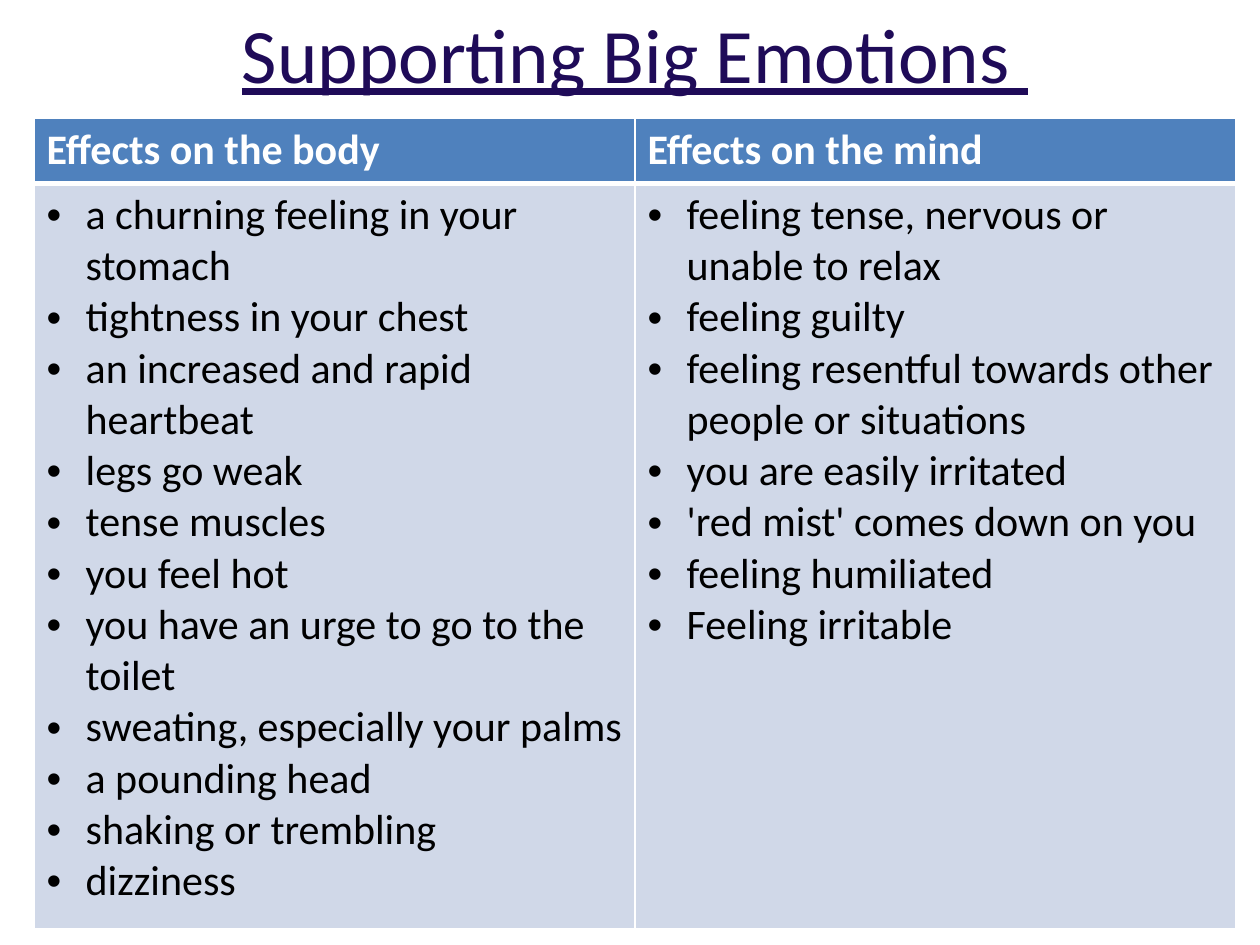
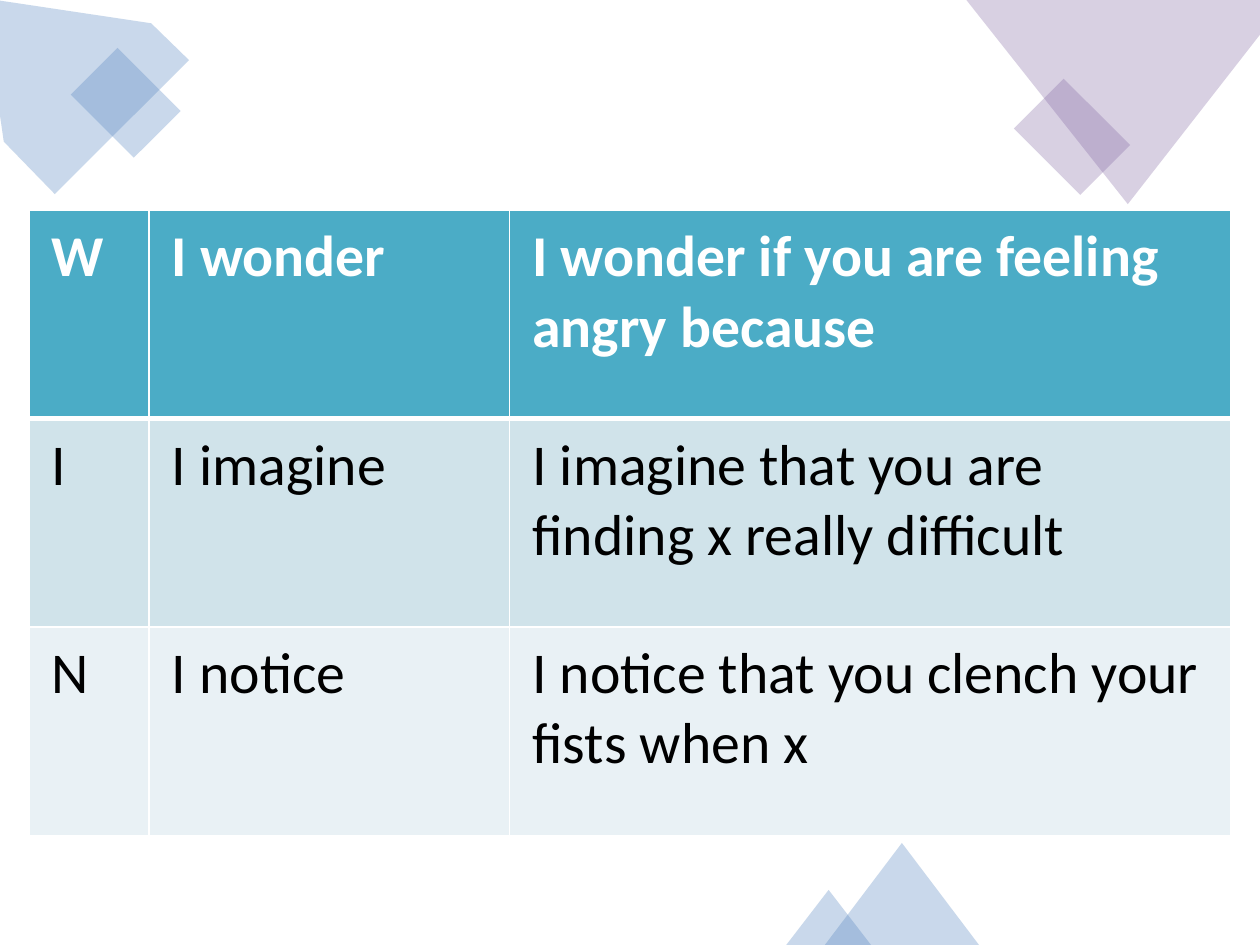
import dataclasses

import lxml.etree
import pptx
import pptx.dml.color
import pptx.enum.shapes
import pptx.enum.text
import pptx.oxml
import pptx.oxml.ns
import pptx.util

RGB = pptx.dml.color.RGBColor
SHAPE = pptx.enum.shapes.MSO_SHAPE
WHITE = RGB(0xFF, 0xFF, 0xFF)
BLACK = RGB(0x00, 0x00, 0x00)
INDIGO = RGB(0x1F, 0x0B, 0x58)
BLUE = RGB(0x4F, 0x81, 0xBD)
PURPLE = RGB(0x80, 0x64, 0xA2)
TEAL = RGB(0x4B, 0xAC, 0xC6)
PALE_BLUE = RGB(0xD0, 0xD8, 0xE8)
PALE_TEAL = RGB(0xD0, 0xE3, 0xEA)
FAINT_TEAL = RGB(0xE9, 0xF1, 0xF5)
FONT = "Calibri"
GRID_COLUMNS, GRID_ROWS = 100, 75
UNIT = pptx.util.Inches(10) // GRID_COLUMNS
TITLE_ONLY, BLANK = 5, 6

BODY_EFFECTS = [
    "a churning feeling in your stomach",
    "tightness in your chest",
    "an increased and rapid heartbeat",
    "legs go weak",
    "tense muscles",
    "you feel hot",
    "you have an urge to go to the toilet",
    "sweating, especially your palms",
    "a pounding head",
    "shaking or trembling",
    "dizziness",
]
MIND_EFFECTS = [
    "feeling tense, nervous or unable to relax",
    "feeling guilty",
    "feeling resentful towards other people or situations",
    "you are easily irritated",
    "'red mist' comes down on you",
    "feeling humiliated",
    "Feeling irritable",
]
EFFECTS = [["Effects on the body", "Effects on the mind"], [BODY_EFFECTS, MIND_EFFECTS]]
WIN_PROMPTS = [
    ["W", "I wonder", "I wonder if you are feeling angry because"],
    ["I", "I imagine", "I imagine that you are finding x really difficult"],
    ["N", "I notice", "I notice that you clench your fists when x"],
]


@dataclasses.dataclass
class Box:
    """A region measured in grid columns and rows."""

    left: float
    top: float
    width: float
    height: float

    def point(self, across, down):
        """Return the slide position at the given shares of the box."""
        return (round((self.left + across * self.width) * UNIT),
                round((self.top + down * self.height) * UNIT))

    def area(self, across=0, down=0, wide=1, high=1):
        """Return left, top, width and height of an area given in shares."""
        return (*self.point(across, down),
                round(wide * self.width * UNIT), round(high * self.height * UNIT))


@dataclasses.dataclass
class TableStyle:
    """The look of one table."""

    row_fills: list
    size: float
    margin_x: float = 1
    margin_y: float = 0.5


def style_font(font, size, color, bold=None, underline=None):
    """Set the shared font with a size, a colour and optional marks."""
    font.name, font.size, font.color.rgb = FONT, pptx.util.Pt(size), color
    font.bold, font.underline = bold, underline


def add_title(slide, box, text):
    """Place the underlined slide title."""
    title = slide.shapes.title
    title.left, title.top, title.width, title.height = box.area()
    frame = title.text_frame
    frame.text = text
    frame.auto_size = pptx.enum.text.MSO_AUTO_SIZE.NONE
    heading = frame.paragraphs[0]
    heading.alignment = pptx.enum.text.PP_ALIGN.CENTER
    style_font(heading.font, 44, INDIGO, underline=True)


def set_borders(cell, top, bottom):
    """Draw white cell borders, one point wide at the sides."""
    properties = cell._tc.get_or_add_tcPr()
    widths = {"lnL": 1, "lnR": 1, "lnT": top, "lnB": bottom}
    for place, (side, width) in enumerate(widths.items()):
        border = pptx.oxml.parse_xml(
            f'<a:{side} {pptx.oxml.ns.nsdecls("a")} w="{pptx.util.Pt(width)}">'
            f'<a:solidFill><a:srgbClr val="{WHITE}"/></a:solidFill></a:{side}>')
        properties.insert(place, border)


def add_bullet(paragraph):
    """Give a paragraph a round bullet with a hanging indent."""
    properties = paragraph._p.get_or_add_pPr()
    indent = round(3.1 * UNIT)
    properties.set("marL", str(indent))
    properties.set("indent", str(-indent))
    bullet_font = lxml.etree.SubElement(properties, pptx.oxml.ns.qn("a:buFont"))
    bullet_font.set("typeface", "Arial")
    bullet = lxml.etree.SubElement(properties, pptx.oxml.ns.qn("a:buChar"))
    bullet.set("char", "•")


def fill_cell(cell, content, style, row):
    """Write one cell, with a list shown as bullets."""
    cell.fill.solid()
    cell.fill.fore_color.rgb = style.row_fills[row]
    set_borders(cell, top=3 if row == 1 else 1, bottom=3 if row == 0 else 1)
    cell.margin_left = cell.margin_right = round(style.margin_x * UNIT)
    cell.margin_top = cell.margin_bottom = round(style.margin_y * UNIT)
    bulleted = isinstance(content, list)
    cell.text = "\n".join(content) if bulleted else content
    for paragraph in cell.text_frame.paragraphs:
        style_font(paragraph.font, style.size, BLACK if row else WHITE, bold=row == 0)
        if bulleted:
            add_bullet(paragraph)


def add_grid_table(slide, box, content, column_shares, row_shares, style):
    """Build a table whose columns and rows are shares of the box."""
    frame = slide.shapes.add_table(len(content), len(content[0]), *box.area())
    table = frame.table
    for column, share in zip(table.columns, column_shares):
        column.width = round(share * box.width * UNIT)
    for row, share in zip(table.rows, row_shares):
        row.height = round(share * box.height * UNIT)
    for row, entries in enumerate(content):
        for column, entry in enumerate(entries):
            fill_cell(table.cell(row, column), entry, style, row)


def tint(shape, color):
    """Fill a decoration with a mostly transparent colour and no line."""
    shape.shadow.inherit = False
    shape.line.fill.background()
    shape.fill.solid()
    shape.fill.fore_color.rgb = color
    color_node = shape._element.spPr.find(".//" + pptx.oxml.ns.qn("a:srgbClr"))
    alpha = lxml.etree.SubElement(color_node, pptx.oxml.ns.qn("a:alpha"))
    alpha.set("val", "30000")


def add_corner(slide, box, color, outline, diamond):
    """Draw a corner polygon overlapped by a tilted rectangle."""
    builder = slide.shapes.build_freeform(*box.point(*outline[0]))
    builder.add_line_segments([box.point(*vertex) for vertex in outline[1:]])
    tint(builder.convert_to_shape(), color)
    tilted = slide.shapes.add_shape(SHAPE.RECTANGLE, *box.area(*diamond))
    tilted.rotation = 315
    tint(tilted, color)


def add_peaks(slide, box, color):
    """Draw two overlapping triangles standing on the bottom edge."""
    for peak in [(0.2, 0, 0.8, 1), (0, 0.46, 0.44, 0.54)]:
        tint(slide.shapes.add_shape(SHAPE.ISOSCELES_TRIANGLE, *box.area(*peak)), color)


def build_effects_slide(deck):
    """Compare the effects of big emotions on body and mind."""
    slide = deck.slides.add_slide(deck.slide_layouts[TITLE_ONLY])
    add_grid_table(slide, Box(2.7, 9.4, 95.4, 64.3), EFFECTS, [1 / 2] * 2,
                   [0.08, 0.92], TableStyle([BLUE, PALE_BLUE], 24))
    add_title(slide, Box(8.6, 0, 83.6, 8.4), "Supporting Big Emotions ")


def build_prompts_slide(deck):
    """Show the wonder, imagine and notice prompts."""
    slide = deck.slides.add_slide(deck.slide_layouts[BLANK])
    add_corner(slide, Box(0, 0, 15, 15.4), BLUE,
               [(0.8, 0.12), (-0.09, -0.01), (0.02, 0.73), (0.29, 1), (1, 0.31)],
               (0.49, 0.3, 0.35, 0.46))
    add_corner(slide, Box(76.7, 0, 23.3, 16.2), PURPLE,
               [(1, 0), (0, 0), (0.55, 1), (1, 0.17)],
               (0.24, 0.44, 0.24, 0.46))
    add_peaks(slide, Box(62.4, 66.9, 15.3, 8.1), BLUE)
    add_grid_table(slide, Box(2.3, 16.7, 95.4, 49.6), WIN_PROMPTS,
                   [0.1, 0.3, 0.6], [1 / 3] * 3,
                   TableStyle([TEAL, PALE_TEAL, FAINT_TEAL], 33, 1.8, 0.9))


def main():
    """Build and save the deck."""
    deck = pptx.Presentation()
    deck.slide_width, deck.slide_height = GRID_COLUMNS * UNIT, GRID_ROWS * UNIT
    build_effects_slide(deck)
    build_prompts_slide(deck)
    deck.save("out.pptx")


if __name__ == "__main__":
    main()
